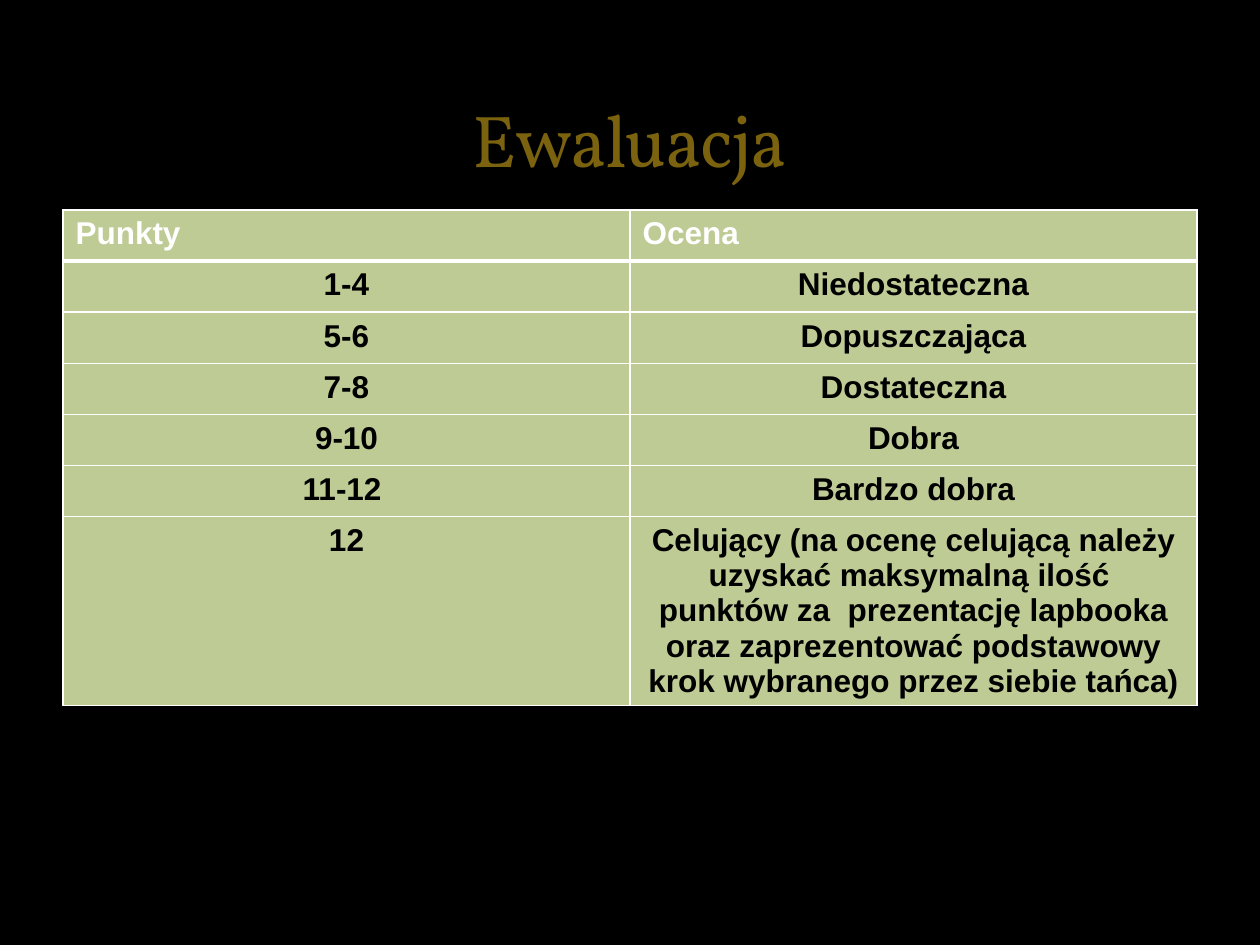
from dataclasses import dataclass

import pptx
import pptx.dml.color
import pptx.enum.text
import pptx.oxml
import pptx.oxml.ns
import pptx.util

Pt = pptx.util.Pt
Align = pptx.enum.text.PP_ALIGN
Anchor = pptx.enum.text.MSO_ANCHOR


@dataclass
class Theme:
    back: str = "000000"
    gold: str = "7A620E"
    green: str = "BECB95"
    white: str = "FFFFFF"
    black: str = "000000"
    serif: str = "Vollkorn"
    sans: str = "Arial"
    head: int = 42
    body: int = 18
    thin: int = 1
    thick: int = 3


def tint(code):
    return pptx.dml.color.RGBColor.from_string(code)


class Deck:
    def __init__(self, theme):
        self.theme = theme
        self.file = pptx.Presentation()
        self.file.slide_width = Pt(720)
        self.file.slide_height = Pt(540)
        self.slide = self.file.slides.add_slide(self.file.slide_layouts[5])
        fill = self.slide.background.fill
        fill.solid()
        fill.fore_color.rgb = tint(theme.back)

    def style(self, para, face, size, color, bold, align):
        para.alignment = align
        for run in para.runs:
            run.font.name = face
            run.font.size = Pt(size)
            run.font.bold = bold
            run.font.color.rgb = tint(color)

    def title(self, text, left, top, width, height):
        shape = self.slide.shapes.title
        shape.left, shape.top = Pt(left), Pt(top)
        shape.width, shape.height = Pt(width), Pt(height)
        frame = shape.text_frame
        frame.text = text
        frame.word_wrap = True
        frame.auto_size = pptx.enum.text.MSO_AUTO_SIZE.NONE
        frame.vertical_anchor = Anchor.BOTTOM
        para = frame.paragraphs[0]
        look = self.theme
        self.style(para, look.serif, look.head, look.gold, False, Align.CENTER)
        para.runs[0].font._element.set("spc", "-100")

    def border(self, cell, sides):
        props = cell._tc.get_or_add_tcPr()
        space = pptx.oxml.ns.nsdecls("a")
        for spot, (side, width) in enumerate(sides.items()):
            line = pptx.oxml.parse_xml(
                f'<a:{side} {space} w="{Pt(width)}"><a:solidFill>'
                f'<a:srgbClr val="{self.theme.white}"/>'
                f"</a:solidFill></a:{side}>"
            )
            props.insert(spot, line)

    def cell(self, cell, text, row):
        look = self.theme
        cell.fill.solid()
        cell.fill.fore_color.rgb = tint(look.green)
        cell.text_frame.text = text
        color = look.black if row else look.white
        align = Align.CENTER if row else Align.LEFT
        para = cell.text_frame.paragraphs[0]
        self.style(para, look.sans, look.body, color, True, align)
        sides = dict.fromkeys(("lnL", "lnR", "lnT", "lnB"), look.thin)
        if row == 0:
            sides["lnB"] = look.thick
        if row == 1:
            sides["lnT"] = look.thick
        self.border(cell, sides)

    def table(self, rows, left, top, width, step):
        count = len(rows[0])
        frame = self.slide.shapes.add_table(
            len(rows), count, Pt(left), Pt(top), Pt(width), Pt(step * len(rows))
        )
        grid = frame.table
        for col in grid.columns:
            col.width = Pt(width / count)
        for row, texts in enumerate(rows):
            grid.rows[row].height = Pt(step)
            for col, text in enumerate(texts):
                self.cell(grid.cell(row, col), text, row)


GRADES = [
    ("Punkty", "Ocena"),
    ("1-4", "Niedostateczna"),
    ("5-6", "Dopuszczająca"),
    ("7-8", "Dostateczna"),
    ("9-10", "Dobra"),
    ("11-12 ", "Bardzo dobra"),
    (
        "12",
        "Celujący (na ocenę celującą należy uzyskać maksymalną ilość  "
        "punktów za  prezentację lapbooka oraz zaprezentować podstawowy "
        "krok wybranego przez siebie tańca)",
    ),
]


def main():
    deck = Deck(Theme())
    deck.title("Ewaluacja", 36, 12, 648, 96)
    deck.table(GRADES, 36, 120, 648, 29.2)
    deck.file.save("out.pptx")


if __name__ == "__main__":
    main()
